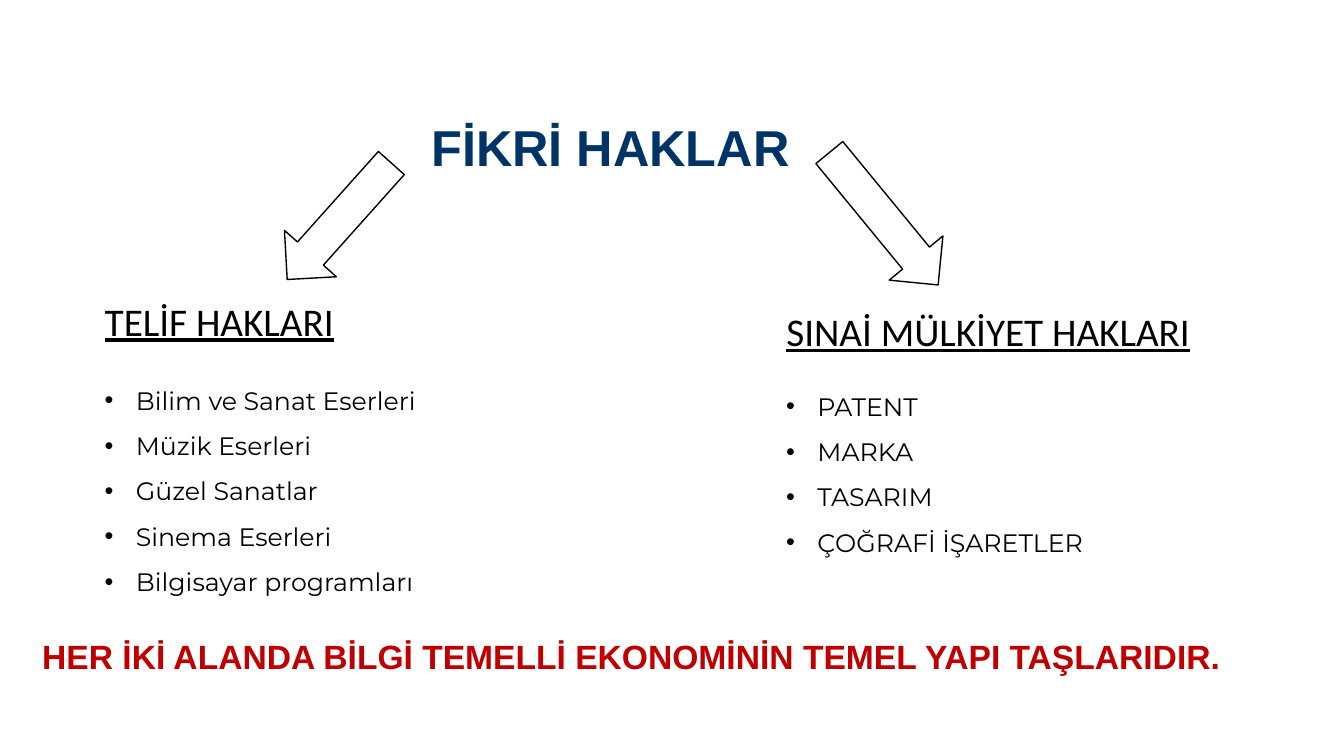
import pptx
import pptx.util
import pptx.dml.color
import pptx.enum.shapes
import pptx.enum.text
import pptx.oxml.ns
import lxml.etree

Inches = pptx.util.Inches
Pt = pptx.util.Pt
COLORS = {"black": "000000", "white": "FFFFFF", "navy": "003366", "red": "C00000"}


def rgb(name):
    return pptx.dml.color.RGBColor.from_string(COLORS[name])


def add_text(box, lines, font, size, color, bold=None, underline=None,
             wrap=True, spacing=None, align=None, bullet=False):
    shape = slide.shapes.add_textbox(*[Inches(length) for length in box])
    frame = shape.text_frame
    frame.word_wrap = wrap
    frame.auto_size = pptx.enum.text.MSO_AUTO_SIZE.SHAPE_TO_FIT_TEXT
    for index, line in enumerate(lines):
        paragraph = frame.add_paragraph() if index else frame.paragraphs[0]
        paragraph.line_spacing = spacing
        paragraph.alignment = align
        if bullet:
            properties = paragraph._p.get_or_add_pPr()
            properties.set("marL", str(Inches(0.31)))
            properties.set("indent", str(Inches(-0.31)))
            for tag, key, value in (("a:buFont", "typeface", "Arial"), ("a:buChar", "char", "•")):
                lxml.etree.SubElement(properties, pptx.oxml.ns.qn(tag)).set(key, value)
        run = paragraph.add_run()
        run.text = line
        run.font.name = font
        run.font.size = Pt(size)
        run.font.color.rgb = rgb(color)
        run.font.bold = bold
        run.font.underline = underline


presentation = pptx.Presentation()
presentation.slide_width = Inches(13.33)
presentation.slide_height = Inches(7.5)
slide = presentation.slides.add_slide(presentation.slide_layouts[6])

for left, top, height, rotation in ((3.02, 1.42, 1.55, 41.8), (8.42, 1.32, 1.7, 320.6)):
    arrow = slide.shapes.add_shape(
        pptx.enum.shapes.MSO_SHAPE.DOWN_ARROW,
        Inches(left), Inches(top), Inches(0.69), Inches(height))
    arrow.rotation = rotation
    arrow.shadow.inherit = False
    arrow.fill.solid()
    arrow.fill.fore_color.rgb = rgb("white")
    arrow.line.color.rgb = rgb("black")
    arrow.line.width = Pt(1)

add_text((0.94, 2.9, 2.89, 0.57), ["TELİF HAKLARI"], "Calibri", 28, "black", underline=True)
add_text((7.7, 3, 4.25, 0.57), ["SINAİ MÜLKİYET HAKLARI"], "Calibri", 28, "black",
         underline=True, wrap=False)

copyright_items = ["Bilim ve Sanat Eserleri", "Müzik Eserleri", "Güzel Sanatlar",
                   "Sinema Eserleri", "Bilgisayar programları"]
industrial_items = ["PATENT", "MARKA", "TASARIM", "ÇOĞRAFİ İŞARETLER"]
for box, items in (((0.94, 3.62, 3.94, 3.88), copyright_items),
                   ((7.7, 3.68, 3.94, 3.43), industrial_items)):
    add_text(box, items, "Montserrat", 18, "black", spacing=1.5, bullet=True)

add_text((0.32, 6.3, 13.01, 0.46),
         ["HER İKİ ALANDA BİLGİ TEMELLİ EKONOMİNİN TEMEL YAPI TAŞLARIDIR."],
         "Arial", 24, "red", bold=True, spacing=0.9)
add_text((4.16, 1.17, 3.79, 0.65), ["FİKRİ HAKLAR"], "Arial", 36, "navy", bold=True,
         wrap=False, spacing=0.9, align=pptx.enum.text.PP_ALIGN.CENTER)

presentation.save("out.pptx")
